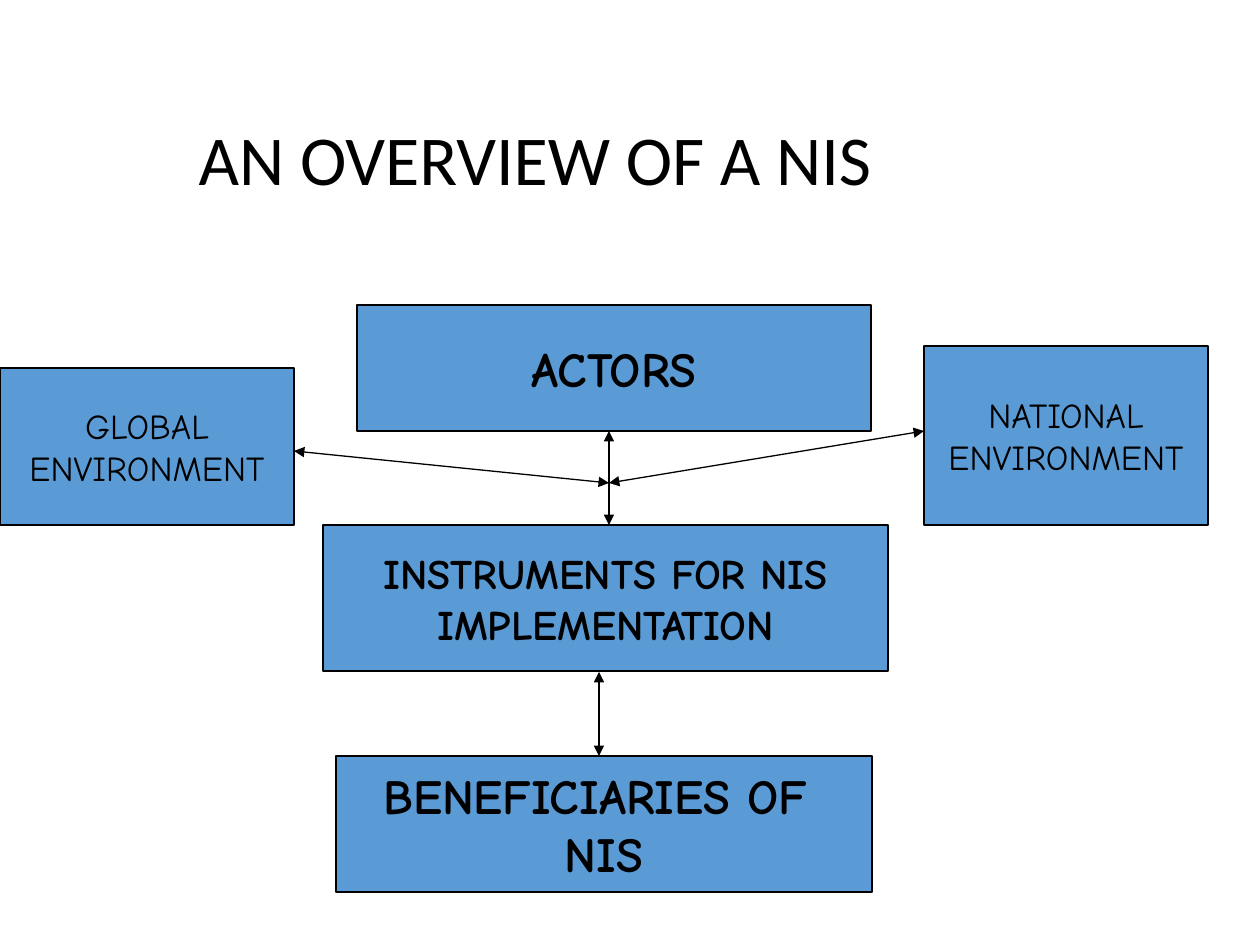
from lxml import etree
from pptx import Presentation
from pptx import util as u
from pptx.dml.color import RGBColor
from pptx.enum import shapes, text
from pptx.oxml import ns

PX_PER_INCH = 126


def px(length):
    return u.Emu(round(length * u.Inches(1) / PX_PER_INCH))


def color(value):
    return RGBColor.from_string(value)


class SlideBuilder:
    """Holds the style and the current slide."""

    title_font = "Calibri"
    box_font = "Comic Neue"
    ink = "000000"
    box_fill = "5B9BD5"
    line_width = u.Pt(0.75)

    def __init__(self, slide):
        self.slide = slide

    def add_span(self, para, words, font, size, bold=False):
        span = para.add_run()
        span.text = words
        span.font.name = font
        span.font.size = u.Pt(size)
        span.font.bold = bold
        span.font.color.rgb = color(self.ink)

    def outline(self, line):
        line.color.rgb = color(self.ink)
        line.width = self.line_width

    def title(self, words, left, top, width, height):
        title = self.slide.shapes.title
        title.left, title.top = px(left), px(top)
        title.width, title.height = px(width), px(height)
        frame = title.text_frame
        frame.auto_size = text.MSO_AUTO_SIZE.NONE
        frame.vertical_anchor = text.MSO_ANCHOR.MIDDLE
        para = frame.paragraphs[0]
        para.alignment = text.PP_ALIGN.LEFT
        para.line_spacing = 0.9
        self.add_span(para, words, self.title_font, 40)

    def box(self, lines, left, top, width, height, size, bold=False):
        box = self.slide.shapes.add_shape(
            shapes.MSO_SHAPE.RECTANGLE, px(left), px(top), px(width), px(height))
        box.shadow.inherit = False
        box.fill.solid()
        box.fill.fore_color.rgb = color(self.box_fill)
        self.outline(box.line)
        frame = box.text_frame
        frame.word_wrap = False
        frame.vertical_anchor = text.MSO_ANCHOR.MIDDLE
        for index, words in enumerate(lines):
            para = frame.add_paragraph() if index else frame.paragraphs[0]
            para.alignment = text.PP_ALIGN.CENTER
            self.add_span(para, words, self.box_font, size, bold)

    def double_arrow(self, start, end):
        arrow = self.slide.shapes.add_connector(
            shapes.MSO_CONNECTOR.STRAIGHT, *map(px, start + end))
        self.outline(arrow.line)
        properties = arrow._element.spPr
        line = properties.find(ns.qn("a:ln"))
        for tag in ("a:headEnd", "a:tailEnd"):
            etree.SubElement(line, ns.qn(tag), type="triangle")
        etree.SubElement(properties, ns.qn("a:effectLst"))


def main():
    deck = Presentation()
    deck.slide_width, deck.slide_height = u.Inches(10), u.Inches(7.5)
    page = SlideBuilder(deck.slides.add_slide(deck.slide_layouts[5]))

    page.title("AN OVERVIEW OF A NIS", 186, 84, 1074, 158)

    # Central chain, from actors down to beneficiaries
    page.box(["ACTORS"], 357, 305, 514, 126, 28, bold=True)
    page.box(["INSTRUMENTS FOR NIS", "IMPLEMENTATION"],
             323, 525, 565, 146, 24, bold=True)
    page.box(["BENEFICIARIES OF ", "NIS"], 336, 756, 536, 136, 28, bold=True)

    # Environments on either side
    page.box(["NATIONAL", "ENVIRONMENT"], 924, 346, 284, 179, 20)
    page.box(["GLOBAL", "ENVIRONMENT"], 0, 368, 294, 157, 20)

    # Links down the chain, then from each environment to the junction
    page.double_arrow((609, 431), (609, 525))
    page.double_arrow((599, 672), (599, 756))
    junction = (609, 483)
    for edge in ((294, 451), (924, 431)):
        page.double_arrow(edge, junction)

    deck.save("out.pptx")


if __name__ == "__main__":
    main()
